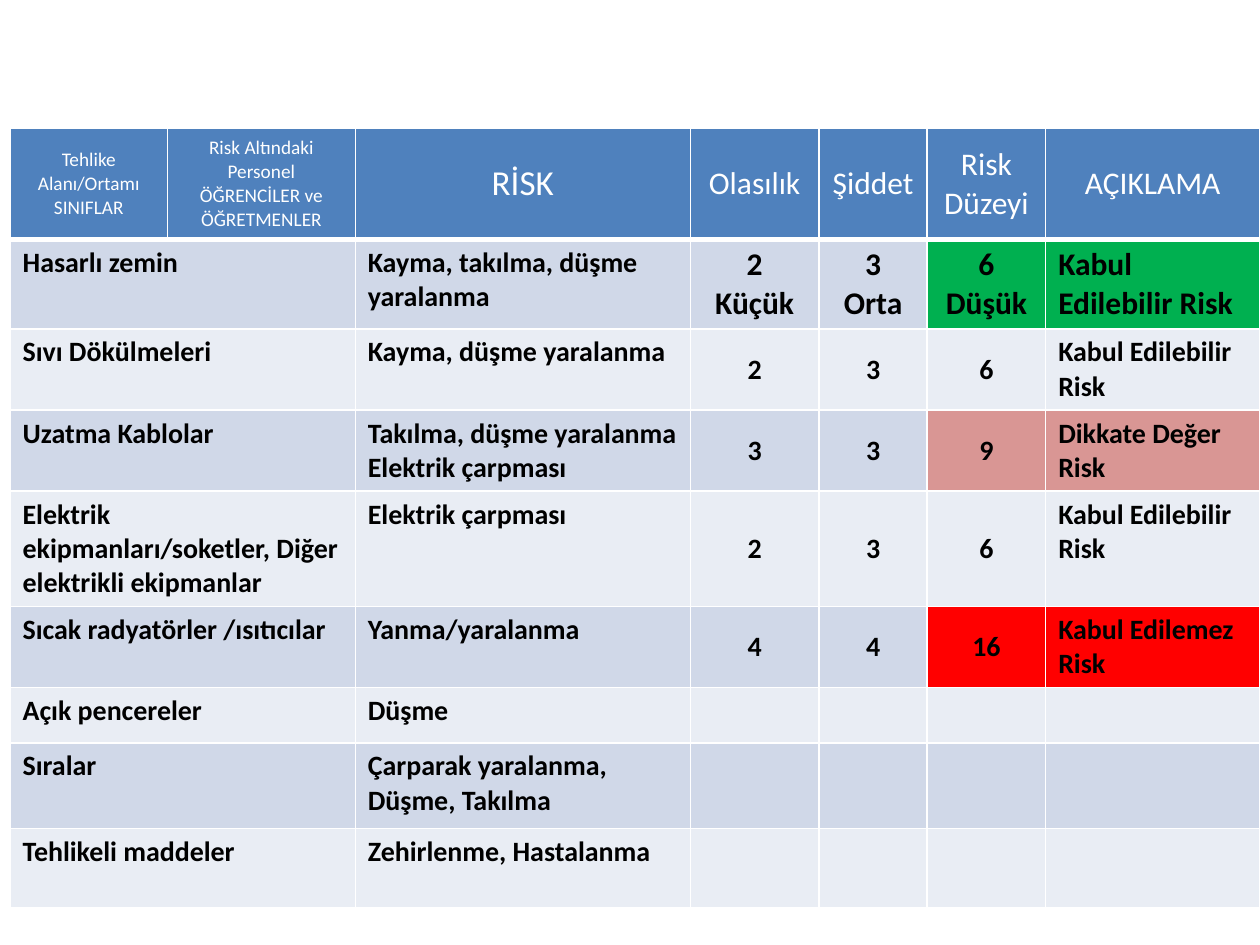
import pptx
import pptx.dml.color
import pptx.enum.text
import pptx.oxml
import pptx.oxml.ns
import pptx.util
from pptx.util import Inches

COLORS = {
    "header": "4F81BD", "band_dark": "D0D8E8", "band_light": "E9EDF4",
    "low": "00B050", "notable": "D99694", "unacceptable": "FF0000",
    "white": "FFFFFF", "black": "000000",
}
FONT = "Calibri"
ALIGN = pptx.enum.text.PP_ALIGN
ANCHOR = pptx.enum.text.MSO_ANCHOR

COLUMN_WIDTHS = [1.25, 1.49, 2.66, 1.02, 0.86, 0.94, 1.7]
ROW_HEIGHTS = [0.88, 0.7, 0.63, 0.63, 0.9, 0.63, 0.44, 0.68, 0.63]

# Heading lines and their text size
HEADINGS = [
    (["Tehlike Alanı/Ortamı", "SINIFLAR"], 11),
    (["Risk Altındaki Personel", "ÖĞRENCİLER ve ÖĞRETMENLER"], 11),
    (["RİSK"], 20),
    (["Olasılık"], 18),
    (["Şiddet"], 18),
    (["Risk Düzeyi"], 18),
    (["AÇIKLAMA"], 18),
]

# Hazard, risk, [likelihood, severity, level], comment, highlight, rating size
HAZARDS = [
    ("Hasarlı zemin", "Kayma, takılma, düşme yaralanma",
     [["2", "Küçük"], ["3", "Orta"], ["6", "Düşük"]], "Kabul Edilebilir Risk", "low", 18),
    ("Sıvı Dökülmeleri", "Kayma, düşme yaralanma",
     [["2"], ["3"], ["6"]], "Kabul Edilebilir Risk", None, 16),
    ("Uzatma Kablolar", "Takılma, düşme yaralanma Elektrik çarpması",
     [["3"], ["3"], ["9"]], "Dikkate Değer Risk", "notable", 16),
    ("Elektrik ekipmanları/soketler, Diğer elektrikli ekipmanlar", "Elektrik çarpması",
     [["2"], ["3"], ["6"]], "Kabul Edilebilir Risk", None, 16),
    ("Sıcak radyatörler /ısıtıcılar", "Yanma/yaralanma",
     [["4"], ["4"], ["16"]], "Kabul Edilemez Risk", "unacceptable", 16),
    ("Açık pencereler", "Düşme", [[], [], []], "", None, 16),
    ("Sıralar", "Çarparak yaralanma, Düşme, Takılma", [[], [], []], "", None, 16),
    ("Tehlikeli maddeler", "Zehirlenme, Hastalanma", [[], [], []], "", None, 16),
]


class SlideBuilder:
    def __init__(self, slide):
        self.slide = slide

    def table(self, left, top, widths, heights):
        grid = self.slide.shapes.add_table(
            len(heights), len(widths), Inches(left), Inches(top),
            Inches(sum(widths)), Inches(sum(heights))).table
        for column, width in zip(grid.columns, widths):
            column.width = Inches(width)
        for row, height in zip(grid.rows, heights):
            row.height = Inches(height)
        return grid

    def fill(self, cell, color):
        cell.fill.solid()
        cell.fill.fore_color.rgb = pptx.dml.color.RGBColor.from_string(COLORS[color])

    def text(self, cell, lines, size, color="black", bold=True, centered=False):
        if centered:
            cell.vertical_anchor = ANCHOR.MIDDLE
        frame = cell.text_frame
        for index, line in enumerate(lines):
            paragraph = frame.paragraphs[0] if index == 0 else frame.add_paragraph()
            paragraph.alignment = ALIGN.CENTER if centered else ALIGN.LEFT
            run = paragraph.add_run()
            run.text = line
            run.font.name = FONT
            run.font.size = pptx.util.Pt(size)
            run.font.bold = bold
            run.font.color.rgb = pptx.dml.color.RGBColor.from_string(COLORS[color])

    def borders(self, cell, points):
        properties = cell._tc.get_or_add_tcPr()
        namespace = pptx.oxml.ns.nsdecls("a")
        for index, (side, width) in enumerate(points.items()):
            properties.insert(index, pptx.oxml.parse_xml(
                f'<a:{side} {namespace} w="{pptx.util.Pt(width)}"><a:solidFill>'
                f'<a:srgbClr val="{COLORS["white"]}"/></a:solidFill></a:{side}>'))


def main():
    deck = pptx.Presentation()
    deck.slide_width, deck.slide_height = Inches(10), Inches(7.5)
    builder = SlideBuilder(deck.slides.add_slide(deck.slide_layouts[6]))
    risks = builder.table(0.08, 1.02, COLUMN_WIDTHS, ROW_HEIGHTS)

    # Heading row
    for column, (lines, size) in enumerate(HEADINGS):
        heading = risks.cell(0, column)
        builder.fill(heading, "header")
        builder.text(heading, lines, size, "white", bold=False, centered=True)
        builder.borders(heading, {"lnL": 1, "lnR": 1, "lnT": 1, "lnB": 3})

    # One row per hazard, its name spanning the first two columns
    for row, (hazard, risk, ratings, comment, highlight, size) in enumerate(HAZARDS, 1):
        band = "band_dark" if row % 2 else "band_light"
        for column in range(len(COLUMN_WIDTHS)):
            builder.fill(risks.cell(row, column), highlight if highlight and column >= 5 else band)
        risks.cell(row, 0).merge(risks.cell(row, 1))
        builder.text(risks.cell(row, 0), [hazard], 16)
        builder.text(risks.cell(row, 2), [risk], 16)
        for column, lines in enumerate(ratings, 3):
            builder.text(risks.cell(row, column), lines, size, centered=True)
        if comment:
            builder.text(risks.cell(row, 6), [comment], size)

    deck.save("out.pptx")


if __name__ == "__main__":
    main()
